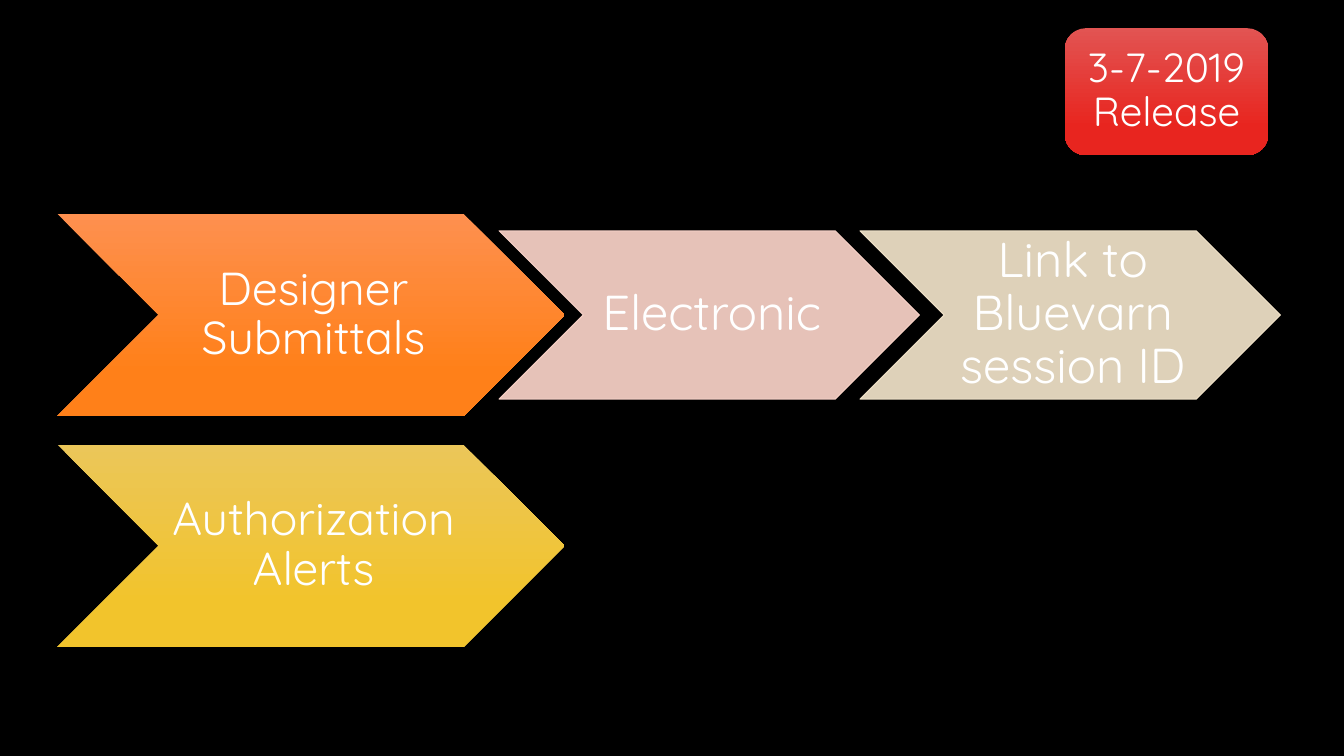
from dataclasses import dataclass

from lxml import etree
from pptx import Presentation
from pptx.dml.color import RGBColor
from pptx.dml.fill import FillFormat
from pptx.enum.shapes import MSO_SHAPE
from pptx.enum.text import MSO_ANCHOR, PP_ALIGN
from pptx.oxml.ns import qn
from pptx.shapes.autoshape import Shape
from pptx.slide import Slide
from pptx.util import Emu, Pt

EMU_PER_PX = 9144  # 100 px to the inch
CHEVRON = MSO_SHAPE.CHEVRON
ROUNDED = MSO_SHAPE.ROUNDED_RECTANGLE
MIDDLE = MSO_ANCHOR.MIDDLE
CENTER = PP_ALIGN.CENTER

FONT = "Quicksand"
COLORS = {
    "background": "000000",
    "text": "FFFFFF",
    "red_light": "E25452",
    "red": "E8251F",
    "orange_light": "FE904F",
    "orange": "FF8019",
    "yellow_light": "EBC659",
    "yellow": "F2C42C",
    "pink": "FFD8CD",
    "cream": "F7E8CE",
}
GRADIENT_END = 0.78
STEP_OPACITY = 90

TOPIC_LEFT, TOPIC_TOP, TOPIC_WIDTH, TOPIC_HEIGHT, TOPIC_PITCH = 57, 212, 503, 201, 229
STEP_LEFT, STEP_WIDTH, STEP_HEIGHT, STEP_PITCH = 495, 417, 167, 358
STEP_TOP = TOPIC_TOP + (TOPIC_HEIGHT - STEP_HEIGHT) // 2
CHEVRON_MARGINS = (5, 2, 0, 2)
BADGE_MARGINS = (12, 12, 12, 12)


@dataclass(frozen=True)
class Step:
    label: str
    color: str


@dataclass(frozen=True)
class Topic:
    label: str
    top_color: str
    bottom_color: str
    steps: tuple[Step, ...] = ()


TOPICS = (
    Topic("Designer Submittals", "orange_light", "orange", (
        Step("Electronic", "pink"),
        Step("Link to Bluevarn session ID", "cream"),
    )),
    Topic("Authorization Alerts", "yellow_light", "yellow"),
)


def px(length: int) -> Emu:
    return Emu(length * EMU_PER_PX)


def rgb(color: str) -> RGBColor:
    return RGBColor.from_string(COLORS[color])


def add_label_shape(slide: Slide, kind: MSO_SHAPE, box: tuple[int, int, int, int],
                    label: str, size: int, margins: tuple[int, int, int, int]) -> Shape:
    """Add an unlined shape with centred text; box is left, top, width, height."""
    shape = slide.shapes.add_shape(kind, *map(px, box))
    shape.shadow.inherit = False
    shape.line.fill.background()
    frame = shape.text_frame
    frame.word_wrap = True
    frame.vertical_anchor = MIDDLE
    (frame.margin_left, frame.margin_top,
     frame.margin_right, frame.margin_bottom) = map(px, margins)
    paragraph = frame.paragraphs[0]
    paragraph.text = label
    paragraph.alignment = CENTER
    paragraph.line_spacing = 0.9
    paragraph.font.name = FONT
    paragraph.font.size = Pt(size)
    paragraph.font.color.rgb = rgb("text")
    return shape


def fill_downward(shape: Shape, top_color: str, bottom_color: str) -> None:
    """Fill with a gradient running from top to bottom."""
    shape.fill.gradient()
    shape.fill.gradient_angle = 270
    stops = shape.fill.gradient_stops
    for stop, position, color in zip(stops, (0, GRADIENT_END), (top_color, bottom_color)):
        stop.position = position
        stop.color.rgb = rgb(color)


def fill_translucent(fill: FillFormat, color: str) -> None:
    fill.solid()
    fill.fore_color.rgb = rgb(color)


def add_step(slide: Slide, step: Step, column: int, top: int) -> None:
    box = (STEP_LEFT + column * STEP_PITCH, top, STEP_WIDTH, STEP_HEIGHT)
    shape = add_label_shape(slide, CHEVRON, box, step.label, 35, CHEVRON_MARGINS)
    fill_translucent(shape.fill, step.color)
    fill_translucent(shape.line.fill, step.color)
    shape.line.width = Pt(0.75)
    for color in shape.element.spPr.iter(qn("a:srgbClr")):
        etree.SubElement(color, qn("a:alpha")).set("val", str(STEP_OPACITY * 1000))


def add_topic(slide: Slide, topic: Topic, row: int) -> None:
    offset = row * TOPIC_PITCH
    box = (TOPIC_LEFT, TOPIC_TOP + offset, TOPIC_WIDTH, TOPIC_HEIGHT)
    shape = add_label_shape(slide, CHEVRON, box, topic.label, 33, CHEVRON_MARGINS)
    fill_downward(shape, topic.top_color, topic.bottom_color)
    for column, step in enumerate(topic.steps):
        add_step(slide, step, column, STEP_TOP + offset)


def main() -> None:
    presentation = Presentation()
    presentation.slide_width, presentation.slide_height = px(1333), px(750)
    slide = presentation.slides.add_slide(presentation.slide_layouts[6])
    slide.background.fill.solid()
    slide.background.fill.fore_color.rgb = rgb("background")

    badge = add_label_shape(slide, ROUNDED, (1056, 28, 202, 126),
                            "3-7-2019\nRelease", 29, BADGE_MARGINS)
    fill_downward(badge, "red_light", "red")
    for row, topic in enumerate(TOPICS):
        add_topic(slide, topic, row)

    presentation.save("out.pptx")


if __name__ == "__main__":
    main()
